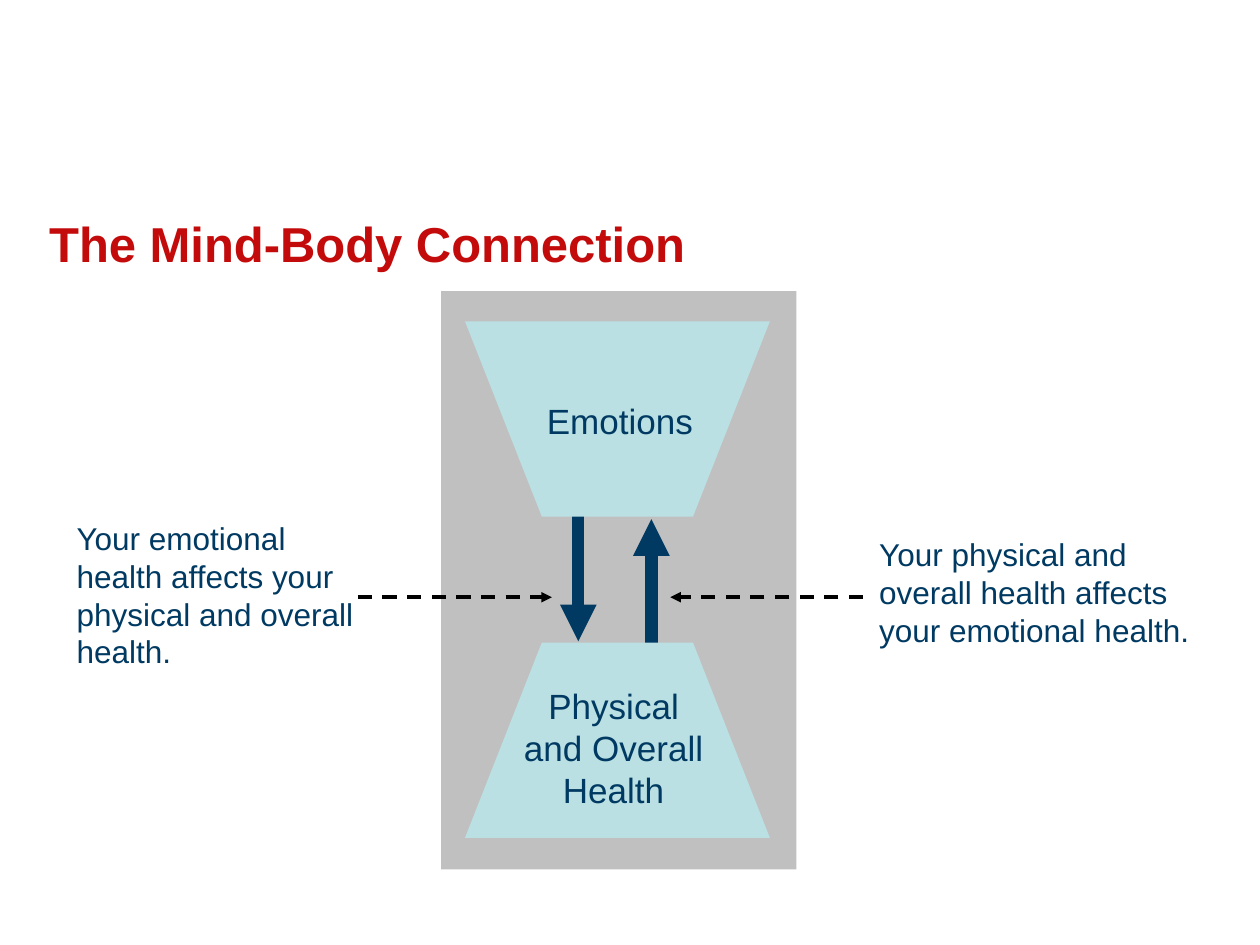
from pptx import Presentation
from pptx.dml.color import RGBColor
from pptx.enum.dml import MSO_LINE
from pptx.enum.shapes import MSO_CONNECTOR, MSO_SHAPE
from pptx.enum.text import MSO_ANCHOR, MSO_AUTO_SIZE, PP_ALIGN
from pptx.oxml.ns import qn
from pptx.util import Inches, Pt
from lxml.etree import SubElement

COLORS = {
    "title": "C30B0B",
    "text": "003A62",
    "panel": "C0C0C0",
    "block": "BBE0E3",
    "flow": "003A62",
    "pointer": "000000",
}


def rgb(name):
    return RGBColor.from_string(COLORS[name])


def style_font(font, size, color, bold=False):
    font.name = "Arial"
    font.size = Pt(size)
    font.bold = bold
    font.color.rgb = rgb(color)


def paint(shape, color):
    shape.shadow.inherit = False
    shape.fill.solid()
    shape.fill.fore_color.rgb = rgb(color)
    shape.line.fill.background()


def add_title(s, text):
    title = s.shapes.title
    title.left, title.top = Inches(0.29), Inches(1.59)
    title.width, title.height = Inches(9.33), Inches(0.68)
    tf = title.text_frame
    tf.vertical_anchor = MSO_ANCHOR.MIDDLE
    p = tf.paragraphs[0]
    p.text = text
    p.alignment = PP_ALIGN.LEFT
    style_font(p.font, 28, "title", bold=True)


def add_panel(s, x, y, w, h):
    panel = s.shapes.add_shape(
        MSO_SHAPE.RECTANGLE, Inches(x), Inches(y), Inches(w), Inches(h))
    paint(panel, "panel")


def add_trapezoid(s, wide_y, narrow_y):
    builder = s.shapes.build_freeform(Inches(3.69), Inches(wide_y))
    corners = [(4.3, narrow_y), (5.5, narrow_y), (6.11, wide_y)]
    builder.add_line_segments([(Inches(x), Inches(y)) for x, y in corners])
    paint(builder.convert_to_shape(), "block")


def add_arrow(s, start, end, color, width, dashed=False):
    points = [Inches(v) for v in (*start, *end)]
    arrow = s.shapes.add_connector(MSO_CONNECTOR.STRAIGHT, *points)
    arrow.line.color.rgb = rgb(color)
    arrow.line.width = Pt(width)
    if dashed:
        arrow.line.dash_style = MSO_LINE.DASH
    SubElement(arrow.line._get_or_add_ln(), qn("a:tailEnd"), type="triangle")
    SubElement(arrow._element.spPr, qn("a:effectLst"))


def add_text(s, text, x, y, w, h, size, align=PP_ALIGN.LEFT):
    box = s.shapes.add_textbox(Inches(x), Inches(y), Inches(w), Inches(h))
    tf = box.text_frame
    tf.word_wrap = False
    tf.auto_size = MSO_AUTO_SIZE.SHAPE_TO_FIT_TEXT
    p = tf.paragraphs[0]
    p.text = text
    p.alignment = align
    style_font(p.font, size, "text")


def main():
    prs = Presentation()
    prs.slide_width, prs.slide_height = Inches(10), Inches(7.5)
    s = prs.slides.add_slide(prs.slide_layouts[5])

    add_title(s, "The Mind-Body Connection")
    add_panel(s, 3.5, 2.31, 2.82, 4.59)
    add_arrow(s, (5.17, 5.36), (5.17, 4.12), "flow", 7)
    add_arrow(s, (4.59, 3.69), (4.59, 5.09), "flow", 7)

    add_trapezoid(s, 2.55, 4.1)
    add_text(s, "Emotions", 4.24, 3.12, 1.36, 0.43, 20, PP_ALIGN.CENTER)
    add_trapezoid(s, 6.65, 5.1)
    add_text(s, "Physical\nand Overall\nHealth",
             4.06, 5.38, 1.62, 1.1, 20, PP_ALIGN.CENTER)

    add_text(s, "Your emotional\nhealth affects your\nphysical and overall\nhealth.",
             0.51, 4.07, 2.4, 1.3, 18)
    add_arrow(s, (2.84, 4.74), (4.38, 4.74), "pointer", 2, dashed=True)
    add_text(s, "Your physical and\noverall health affects\nyour emotional health.",
             6.88, 4.2, 2.66, 1, 18)
    add_arrow(s, (6.85, 4.74), (5.32, 4.74), "pointer", 2, dashed=True)

    prs.save("out.pptx")


if __name__ == "__main__":
    main()
